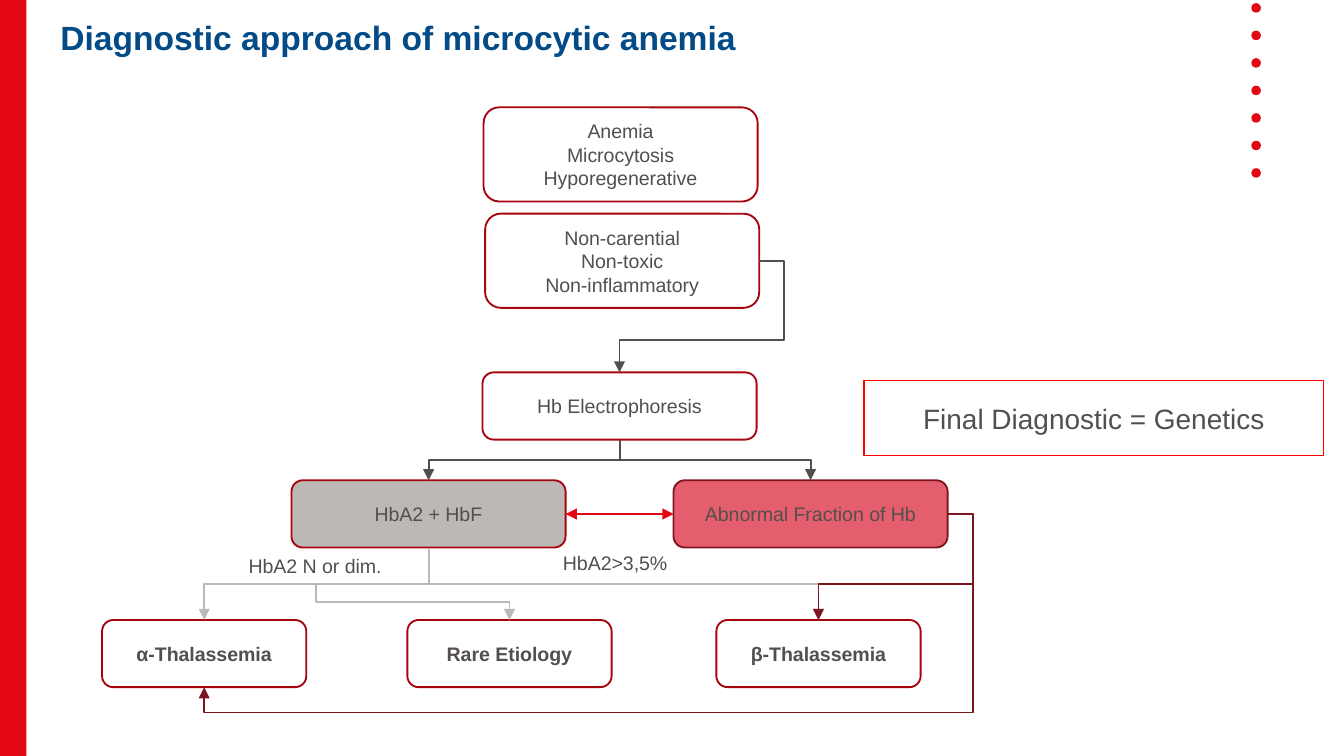
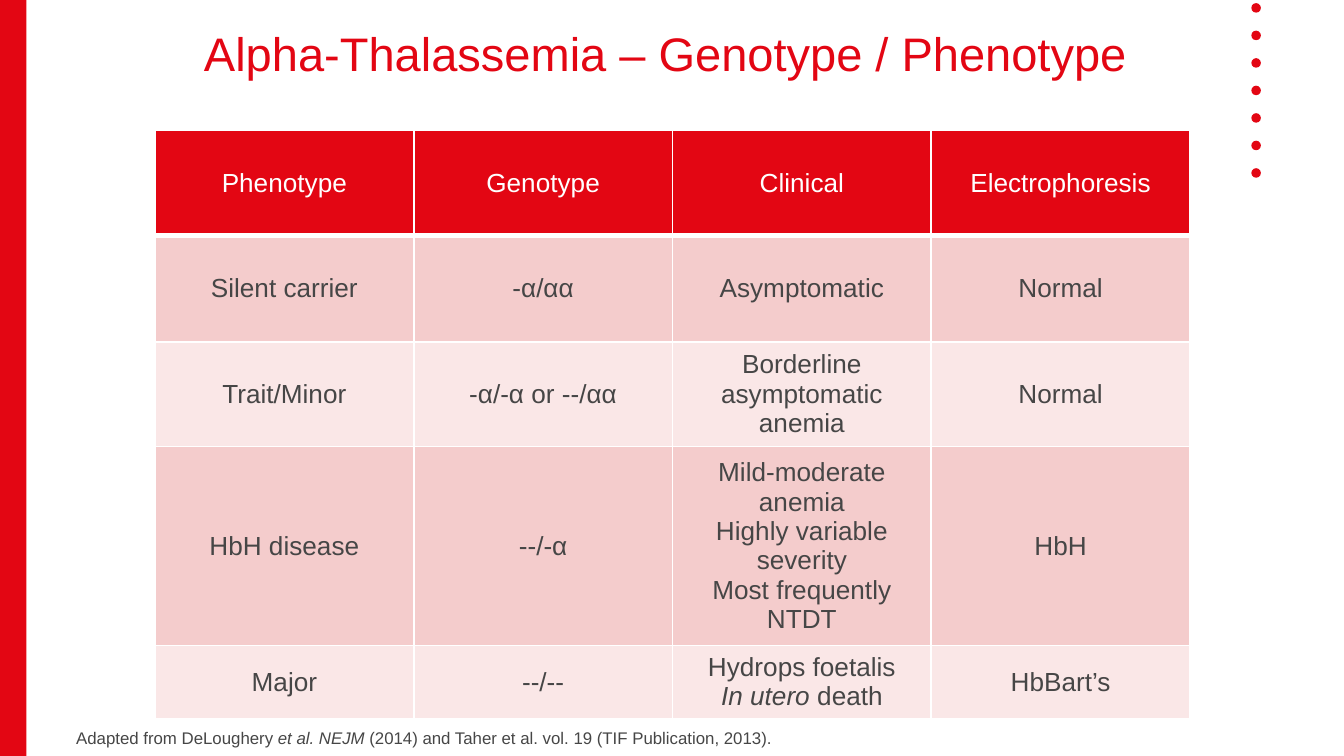
from collections import namedtuple

from lxml.etree import SubElement
from pptx import Presentation
from pptx.dml.color import RGBColor
from pptx.enum.shapes import MSO_CONNECTOR, MSO_SHAPE
from pptx.enum.text import MSO_ANCHOR, MSO_AUTO_SIZE, PP_ALIGN
from pptx.oxml.ns import qn
from pptx.util import Cm, Pt

FONT = "Arial"
RED = RGBColor(0xE3, 0x06, 0x13)
PURE_RED = RGBColor(0xFF, 0x00, 0x00)
DARK_RED = RGBColor(0xA8, 0x04, 0x0E)
WINE = RGBColor(0x7F, 0x15, 0x21)
ROSE = RGBColor(0xE4, 0x5E, 0x6D)
ROW_DARK = RGBColor(0xF4, 0xCC, 0xCC)
ROW_LIGHT = RGBColor(0xFA, 0xE7, 0xE7)
BLUE = RGBColor(0x03, 0x4B, 0x86)
INK = RGBColor(0x53, 0x4F, 0x4D)
TABLE_INK = RGBColor(0x46, 0x46, 0x46)
GREY = RGBColor(0xBC, 0xB8, 0xB6)
WHITE = RGBColor(0xFF, 0xFF, 0xFF)

TOP, LEFT, BOTTOM, RIGHT = range(4)
Box = namedtuple("Box", "left top width height")


def lengths(box):
    return [Cm(value) for value in box]


def write(frame, text, size=10.5, color=INK, bold=False, align=PP_ALIGN.LEFT,
          anchor=MSO_ANCHOR.TOP, wrap=True, spacing=None, insets=None,
          auto_size=MSO_AUTO_SIZE.NONE):
    """Fill a frame: newline = paragraph, vertical tab = break, *...* = italic."""
    frame.word_wrap = wrap
    frame.auto_size = auto_size
    frame.vertical_anchor = anchor
    if insets:
        frame.margin_left = frame.margin_right = Cm(insets[0])
        frame.margin_top = frame.margin_bottom = Cm(insets[1])
    for index, content in enumerate(text.split("\n")):
        paragraph = frame.add_paragraph() if index else frame.paragraphs[0]
        paragraph.alignment = align
        if spacing:
            paragraph.line_spacing = spacing
        for order, piece in enumerate(content.split("*")):
            for number, line in enumerate(piece.split("\v")):
                if number:
                    paragraph.add_line_break()
                if line:
                    run = paragraph.add_run()
                    run.text = line
                    run.font.italic = order % 2 == 1
        for run in paragraph.runs:
            font = run.font
            font.name, font.size, font.bold = FONT, Pt(size), bold
            font.color.rgb = color


def add_block(slide, kind, box, fill=None, line=None, line_width=1):
    block = slide.shapes.add_shape(kind, *lengths(box))
    block.shadow.inherit = False
    if fill is None:
        block.fill.background()
    else:
        block.fill.solid()
        block.fill.fore_color.rgb = fill
    if line is None:
        block.line.fill.background()
    else:
        block.line.color.rgb = line
        block.line.width = Pt(line_width)
    return block


def add_label(slide, box, text, **style):
    label = slide.shapes.add_textbox(*lengths(box))
    write(label.text_frame, text, **style)


def add_title(slide, box, text, **style):
    title = slide.shapes.title
    title.left, title.top, title.width, title.height = lengths(box)
    write(title.text_frame, text, spacing=0.9, **style)


def new_slide(deck):
    """Add a slide with the red side band and the column of dots."""
    slide = deck.slides.add_slide(deck.slide_layouts[5])
    add_block(slide, MSO_SHAPE.RECTANGLE, Box(0, 0, 0.5, 14.29), fill=RED)
    for index in range(7):
        dot = Box(23.65, 0.06 + 0.52 * index, 0.18, 0.18)
        add_block(slide, MSO_SHAPE.OVAL, dot, fill=RED)
    return slide


def site_point(block, site):
    middle_x = block.left + block.width // 2
    middle_y = block.top + block.height // 2
    return ((middle_x, block.top), (block.left, middle_y),
            (middle_x, block.top + block.height),
            (block.left + block.width, middle_y))[site]


def finish_connector(connector, color, ends):
    connector.line.color.rgb = color
    connector.line.width = Pt(1)
    properties = connector.element.spPr
    for end in ends:
        SubElement(properties.find(qn("a:ln")), qn(f"a:{end}"), type="triangle")
    SubElement(properties, qn("a:effectLst"))


def turn_vertical(connector, start, finish):
    """Make an elbow leave and arrive vertically, going down."""
    across, down = finish[0] - start[0], finish[1] - start[1]
    connector.width, connector.height = down, abs(across)
    connector.left = (start[0] + finish[0] - down) // 2
    connector.top = (start[1] + finish[1] - abs(across)) // 2
    frame = connector.element.spPr.find(qn("a:xfrm"))
    frame.set("rot", "16200000" if across > 0 else "5400000")
    frame.set("flipH", "1" if across > 0 else "0")
    frame.set("flipV", "0")


def set_bends(connector, bends):
    geometry = connector.element.spPr.find(qn("a:prstGeom"))
    geometry.set("prst", "bentConnector4")
    for old in list(geometry):
        geometry.remove(old)
    guides = SubElement(geometry, qn("a:avLst"))
    for number, share in enumerate(bends, 1):
        SubElement(guides, qn("a:gd"), name=f"adj{number}",
                   fmla=f"val {round(share * 100000)}")


def add_elbow(slide, target, site, color, source=None, start=None, bends=None):
    """Join a source block (or a start point) to a side of the target.

    With bends the line leaves on the right, else it leaves downwards.
    """
    source_site = RIGHT if bends else BOTTOM
    start = start or site_point(source, source_site)
    finish = site_point(target, site)
    elbow = slide.shapes.add_connector(MSO_CONNECTOR.ELBOW, *start, *finish)
    if source is not None:
        elbow.begin_connect(source, source_site)
    elbow.end_connect(target, site)
    if bends:
        set_bends(elbow, bends)
    else:
        turn_vertical(elbow, start, finish)
    finish_connector(elbow, color, ["tailEnd"])


def draw_flowchart(slide, area):
    def step(left, top, width, height, text, fill=WHITE, line=DARK_RED, bold=False):
        box = Box(area.left + left, area.top + top, width, height)
        block = add_block(slide, MSO_SHAPE.ROUNDED_RECTANGLE, box, fill, line)
        write(block.text_frame, text, bold=bold, align=PP_ALIGN.CENTER,
              anchor=MSO_ANCHOR.MIDDLE)
        return block

    wide, narrow, tall, low = 5.18, 3.86, 1.78, 1.27
    step(7.21, 0, wide, tall, "Anemia\nMicrocytosis\nHyporegenerative")
    exclusions = step(7.24, 2.01, wide, tall,
                      "Non-carential\nNon-toxic\nNon-inflammatory")
    electrophoresis = step(7.19, 5.01, wide, low, "Hb Electrophoresis")
    fractions = step(3.58, 7.05, wide, low, "HbA2 + HbF", fill=GREY)
    abnormal = step(10.8, 7.05, wide, low, "Abnormal Fraction of Hb",
                    fill=ROSE, line=WINE)
    alpha, rare, beta = (
        step(left, 9.69, narrow, low, name, bold=True)
        for left, name in ((0, "α-Thalassemia"), (5.77, "Rare Etiology"),
                           (11.61, "β-Thalassemia")))

    add_elbow(slide, electrophoresis, TOP, INK, exclusions, bends=(-0.18, 0.71))
    for branch in (fractions, abnormal):
        add_elbow(slide, branch, TOP, INK, electrophoresis)
    for diagnosis in (beta, alpha):
        add_elbow(slide, diagnosis, TOP, GREY, fractions)
    leave, arrive = site_point(fractions, BOTTOM), site_point(alpha, TOP)
    junction = [(a + b) // 2 for a, b in zip(leave, arrive)]
    add_elbow(slide, rare, TOP, GREY, start=junction)

    exchange = slide.shapes.add_connector(
        MSO_CONNECTOR.STRAIGHT, *site_point(fractions, RIGHT),
        *site_point(abnormal, LEFT))
    exchange.begin_connect(fractions, RIGHT)
    exchange.end_connect(abnormal, LEFT)
    finish_connector(exchange, RED, ["headEnd", "tailEnd"])

    add_elbow(slide, alpha, BOTTOM, WINE, abnormal, bends=(-0.034, 1.146))
    add_elbow(slide, beta, TOP, WINE, abnormal, bends=(-0.195, 0.66))

    for left, top, width, text in ((8.46, 8.26, 2.51, "HbA2>3,5%"),
                                   (2.52, 8.31, 3.07, "HbA2 N or dim.")):
        add_label(slide, Box(area.left + left, area.top + top, width, 0.71), text,
                  wrap=False, auto_size=MSO_AUTO_SIZE.SHAPE_TO_FIT_TEXT)


def draw_conclusion(slide, box):
    conclusion = add_block(slide, MSO_SHAPE.RECTANGLE, box, line=PURE_RED,
                           line_width=0.75)
    write(conclusion.text_frame, "Final Diagnostic = Genetics", size=15,
          align=PP_ALIGN.CENTER, anchor=MSO_ANCHOR.MIDDLE, insets=(0, 0.1))


def add_borders(cell, bottom):
    properties = cell._tc.get_or_add_tcPr()
    for side, width in (("L", 1), ("R", 1), ("T", 1), ("B", bottom)):
        border = SubElement(properties, qn(f"a:ln{side}"), w=str(Pt(width)))
        fill = SubElement(border, qn("a:solidFill"))
        SubElement(fill, qn("a:srgbClr"), val=str(WHITE))


PHENOTYPES = (
    ("Phenotype", "Genotype", "Clinical", "Electrophoresis"),
    ("Silent carrier", "-α/αα", "Asymptomatic", "Normal"),
    ("Trait/Minor", "-α/-α or --/αα", "Borderline asymptomatic anemia", "Normal"),
    ("HbH disease", "--/-α",
     "Mild-moderate anemia\vHighly variable severity\nMost frequently NTDT", "HbH"),
    ("Major", "--/--", "Hydrops foetalis\n*In utero* death", "HbBart’s"),
)
ROW_HEIGHTS = (2, 2, 1.9, 3.64, 1.35)


def draw_phenotype_table(slide, box):
    table = slide.shapes.add_table(
        len(PHENOTYPES), len(PHENOTYPES[0]), *lengths(box)).table
    for column in table.columns:
        column.width = Cm(box.width / len(PHENOTYPES[0]))
    for index, (texts, height) in enumerate(zip(PHENOTYPES, ROW_HEIGHTS)):
        table.rows[index].height = Cm(height)
        fill = (ROW_DARK if index % 2 else ROW_LIGHT) if index else RED
        for position, text in enumerate(texts):
            cell = table.cell(index, position)
            add_borders(cell, bottom=1 if index else 3)
            cell.fill.solid()
            cell.fill.fore_color.rgb = fill
            cell.vertical_anchor = MSO_ANCHOR.MIDDLE
            cell.margin_left = cell.margin_right = Cm(0.18)
            cell.margin_top = cell.margin_bottom = Cm(0.1)
            write_cell(cell, text, TABLE_INK if index else WHITE)


def write_cell(cell, text, color):
    write(cell.text_frame, text, size=14, color=color, align=PP_ALIGN.CENTER,
          anchor=None, wrap=None, auto_size=None)


def build_approach_slide(deck):
    slide = new_slide(deck)
    add_title(slide, Box(1.14, 0.4, 16.43, 0.85),
              "Diagnostic approach of microcytic anemia", size=18, color=BLUE,
              bold=True, insets=(0, 0))
    draw_flowchart(slide, Box(1.93, 2.03, 16.46, 11.43))
    draw_conclusion(slide, Box(16.33, 7.19, 8.69, 1.42))


def build_genotype_slide(deck):
    slide = new_slide(deck)
    add_title(slide, Box(3.6, 0.53, 18.2, 1.14),
              "Alpha-Thalassemia – Genotype / Phenotype", size=25.2, color=RED,
              anchor=MSO_ANCHOR.BOTTOM)
    add_label(slide, Box(1.19, 13.64, 16.94, 0.64),
              "Adapted from DeLoughery *et al. NEJM* (2014) and Taher et al. "
              "vol. 19 (TIF Publication, 2013).", size=9, color=TABLE_INK,
              auto_size=MSO_AUTO_SIZE.SHAPE_TO_FIT_TEXT)
    draw_phenotype_table(slide, Box(2.93, 2.46, 19.56, sum(ROW_HEIGHTS)))


def main():
    deck = Presentation()
    deck.slide_width, deck.slide_height = Cm(25.4), Cm(14.29)
    build_approach_slide(deck)
    build_genotype_slide(deck)
    deck.save("out.pptx")


if __name__ == "__main__":
    main()
